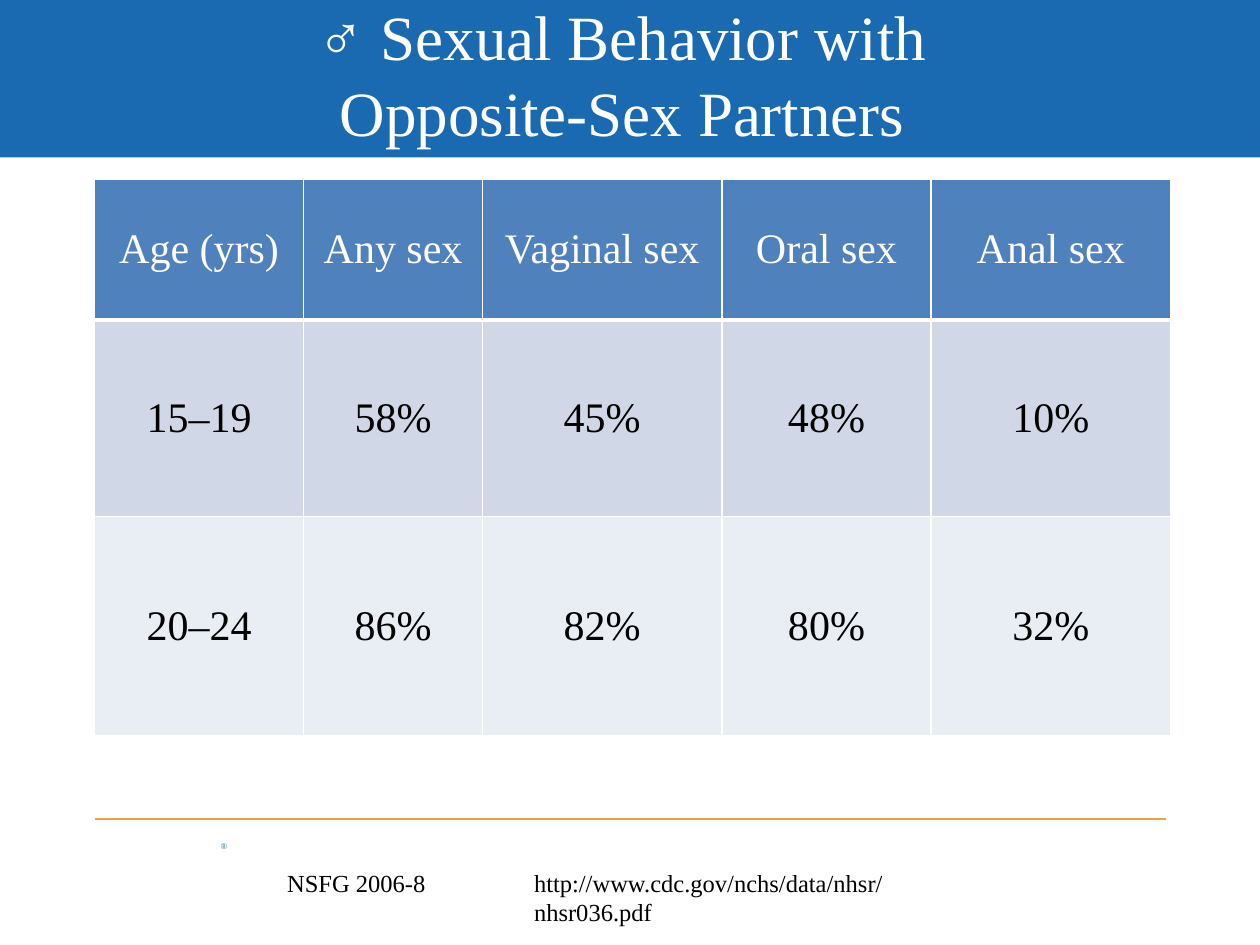
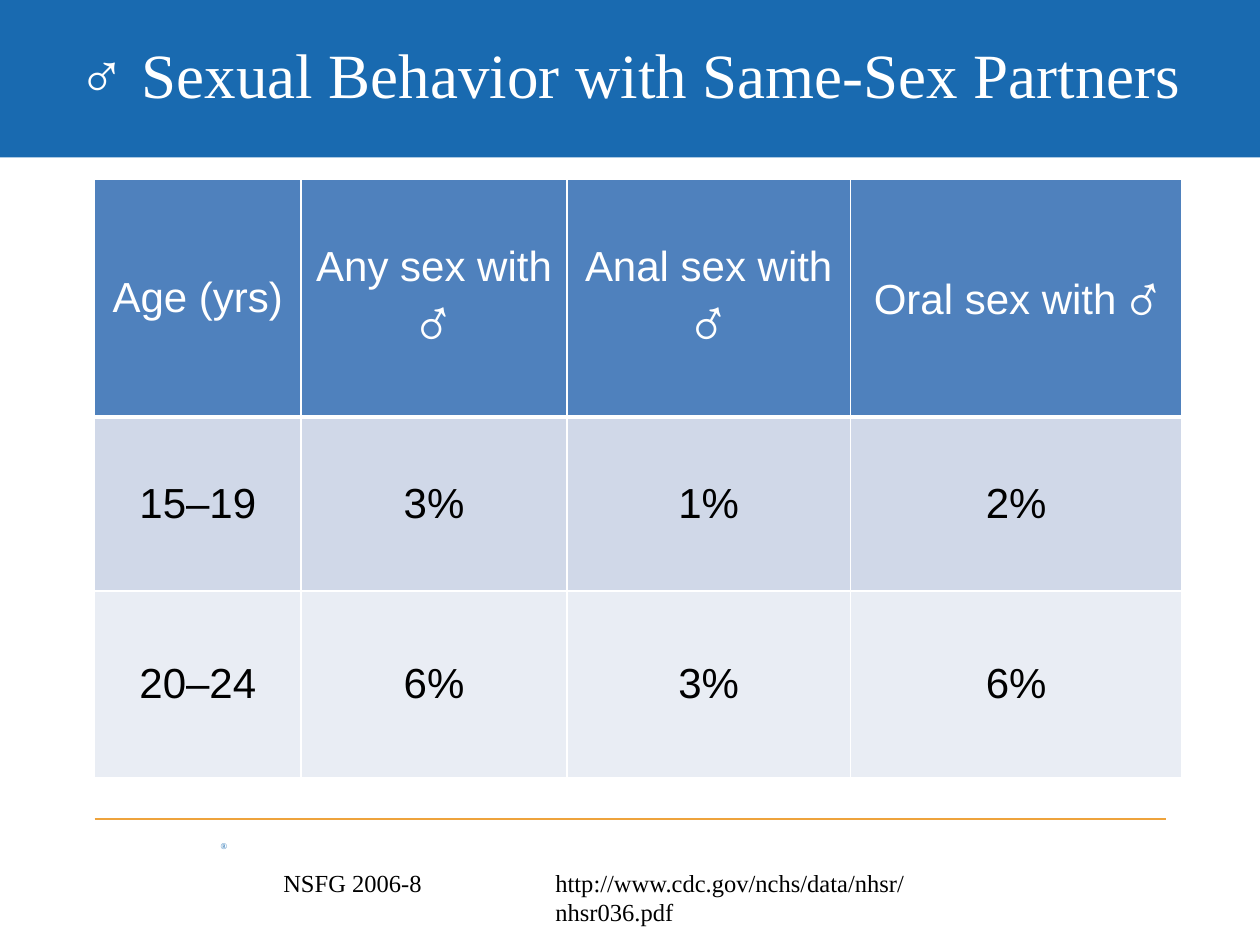
from dataclasses import dataclass

from lxml import etree
from pptx import Presentation
from pptx.dml.color import RGBColor
from pptx.enum.shapes import MSO_CONNECTOR as Connector, MSO_SHAPE as Shape
from pptx.enum.text import MSO_ANCHOR as Anchor, MSO_AUTO_SIZE as AutoSize, PP_ALIGN as Align
from pptx.oxml.ns import qn
from pptx.util import Inches, Pt


@dataclass(frozen=True)
class Theme:
    band: str = "196AB0"
    rule: str = "EEA33C"
    header: str = "4F81BD"
    rows: tuple = ("D0D8E8", "E9EDF4")
    white: str = "FFFFFF"
    black: str = "000000"
    serif: str = "Times New Roman"
    sans: str = "Arial"
    symbol: str = "TeX Gyre Schola"
    title_size: int = 36
    table_size: int = 24
    source_size: int = 14
    mark_size: int = 5


THEME = Theme()
MALE = "♂"
SOURCE_URL = "http://www.cdc.gov/nchs/data/nhsr/nhsr036.pdf"


def color(value):
    return RGBColor.from_string(value)


def set_all(target, values):
    for name, value in values.items():
        setattr(target, name, value)


def style_span(span, font, size, ink):
    set_all(span.font, {"name": font, "size": Pt(size), "bold": False})
    span.font.color.rgb = color(ink)


def add_text(page, text, place, size, ink, inset=None):
    box = page.shapes.add_textbox(*map(Inches, place))
    frame = box.text_frame
    frame.word_wrap = True
    if inset is not None:
        sides = ("left", "top", "right", "bottom")
        set_all(frame, {f"margin_{side}": Inches(inset) for side in sides})
    span = frame.paragraphs[0].add_run()
    span.text = text
    style_span(span, THEME.serif, size, ink)
    return box


def add_shared_parts(deck, page):
    """Build the band, mark and rule, then place them behind the master's placeholders."""
    band = page.shapes.add_shape(Shape.RECTANGLE, 0, 0, deck.slide_width, Inches(1.25))
    band.shadow.inherit = False
    band.fill.solid()
    band.fill.fore_color.rgb = color(THEME.band)
    band.line.fill.background()

    mark = add_text(page, "®", (1.75, 6.67, 0.25, 0.08), THEME.mark_size, THEME.band, inset=0)

    rule = page.shapes.add_connector(
        Connector.STRAIGHT, Inches(0.75), Inches(6.5), Inches(9.25), Inches(6.5))
    rule.line.color.rgb = color(THEME.rule)
    rule.line.width = Pt(0.75)
    etree.SubElement(rule.element.spPr, qn("a:effectLst"))

    first_placeholder = deck.slide_master.shapes[0].element
    for part in (band, mark, rule):
        first_placeholder.addprevious(part.element)


def add_title(page, text):
    title = page.shapes.title
    set_all(title, {"left": Inches(0.5), "top": Inches(0.08),
                    "width": Inches(9), "height": Inches(1)})
    frame = title.text_frame
    set_all(frame, {"auto_size": AutoSize.NONE, "word_wrap": True,
                    "vertical_anchor": Anchor.MIDDLE})
    para = frame.paragraphs[0]
    para.alignment = Align.CENTER
    for number, line in enumerate(text.split("\n")):
        if number:
            para.add_line_break()
        span = para.add_run()
        span.text = line
        style_span(span, THEME.serif, THEME.title_size, THEME.white)


def set_borders(cell, bottom):
    properties = cell._tc.get_or_add_tcPr()
    widths = {"a:lnL": 1, "a:lnR": 1, "a:lnT": 1, "a:lnB": bottom}
    for position, (tag, width) in enumerate(widths.items()):
        line = etree.Element(qn(tag), w=str(Pt(width)))
        fill = etree.SubElement(line, qn("a:solidFill"))
        etree.SubElement(fill, qn("a:srgbClr"), val=THEME.white)
        properties.insert(position, line)


def fill_cell(cell, text, font, is_header, fill, inset):
    set_all(cell, {"vertical_anchor": Anchor.MIDDLE,
                   "margin_left": Inches(inset), "margin_right": Inches(inset),
                   "margin_top": Inches(0.04), "margin_bottom": Inches(0.04)})
    cell.fill.solid()
    cell.fill.fore_color.rgb = color(fill)
    set_borders(cell, 3 if is_header else 1)

    para = cell.text_frame.paragraphs[0]
    para.alignment = Align.CENTER
    words, symbol, _ = text.partition(MALE)
    for piece, face in ((words, font), (symbol, THEME.symbol)):
        if piece:
            span = para.add_run()
            span.text = piece
            style_span(span, face, THEME.table_size, THEME.white if is_header else THEME.black)


def add_rate_table(page, rates, widths, heights, font, inset):
    frame = page.shapes.add_table(
        len(heights), len(widths), Inches(0.75), Inches(1.42),
        Inches(sum(widths)), Inches(sum(heights)))
    table = frame.table
    set_all(table, {"first_row": False, "horz_banding": False})
    for column, width in zip(table.columns, widths):
        column.width = Inches(width)
    fills = (THEME.header, *THEME.rows)
    for number, (row, height, texts) in enumerate(zip(table.rows, heights, rates)):
        row.height = Inches(height)
        for cell, text in zip(row.cells, texts):
            fill_cell(cell, text, font, number == 0, fills[number], inset)


def add_source(page, survey_left, url_left):
    for text, left, width in ((SOURCE_URL, url_left, 3.86), ("NSFG 2006-8", survey_left, 1.35)):
        add_text(page, text, (left, 6.84, width, 0.34), THEME.source_size, THEME.black)


def main():
    deck = Presentation()
    set_all(deck, {"slide_width": Inches(10), "slide_height": Inches(7.5)})
    title_only = deck.slide_layouts[5]

    # Opposite-sex partners
    page = deck.slides.add_slide(title_only)
    add_shared_parts(deck, page)
    add_title(page, f"{MALE} Sexual Behavior with \nOpposite-Sex Partners ")
    add_rate_table(
        page,
        [("Age (yrs)", "Any sex", "Vaginal sex", "Oral sex", "Anal sex"),
         ("15–19", "58%", "45%", "48%", "10%"),
         ("20–24", "86%", "82%", "80%", "32%")],
        widths=(1.66, 1.42, 1.9, 1.66, 1.9), heights=(1.12, 1.56, 1.74),
        font=THEME.serif, inset=0.09)
    add_source(page, survey_left=2.18, url_left=4.14)

    # Same-sex partners
    page = deck.slides.add_slide(title_only)
    add_title(page, f"{MALE} Sexual Behavior with Same-Sex Partners")
    add_rate_table(
        page,
        [("Age (yrs)", *(f"{act} sex with {MALE}" for act in ("Any", "Anal", "Oral"))),
         ("15–19", "3%", "1%", "2%"),
         ("20–24", "6%", "3%", "6%")],
        widths=(1.64, 2.11, 2.25, 2.63), heights=(1.89, 1.38, 1.48),
        font=THEME.sans, inset=0.11)
    add_source(page, survey_left=2.15, url_left=4.31)

    deck.save("out.pptx")


if __name__ == "__main__":
    main()
